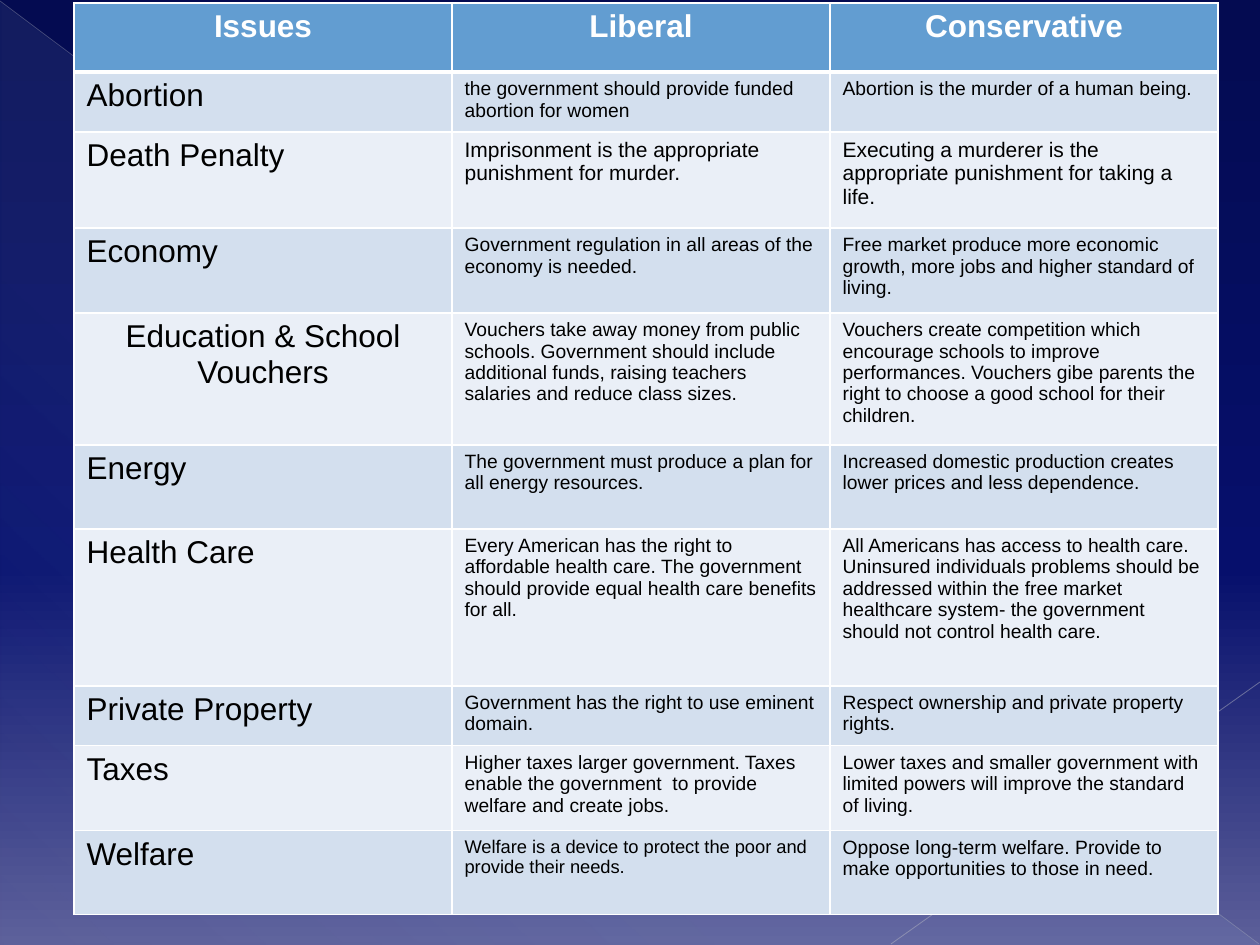
"""Build a slide with a table comparing liberal and conservative views on issues."""
from lxml import etree
from pptx import Presentation
from pptx import util as u
from pptx.dml.color import RGBColor
from pptx.enum import shapes, text
from pptx.oxml.ns import qn

COLORS = {
    "navy": "040B51", "blue": "060F6C", "violet": "5C5F99", "haze": "ACCBF9",
    "long line": "B2B3BE", "short line": "BBBCC5",
    "header": "629DD1", "odd": "D3DFEE", "even": "EAEFF7",
    "white": "FFFFFF", "black": "000000",
}
HEADERS = ["Issues", "Liberal", "Conservative"]
COLUMN_WIDTHS = [378, 378, 388]
ROW_HEIGHTS = [69, 60, 96, 85, 132, 84, 157, 60, 85, 84]
ISSUES = [
    ("Abortion", "the government should provide funded abortion for women",
     "Abortion is the murder of a human being."),
    ("Death Penalty", "Imprisonment is the appropriate punishment for murder.",
     "Executing a murderer is the appropriate punishment for taking a life."),
    ("Economy", "Government regulation in all areas of the economy is needed.",
     "Free market produce more economic growth, more jobs and higher standard of living."),
    ("Education & School Vouchers",
     "Vouchers take away money from public schools. Government should include "
     "additional funds, raising teachers salaries and reduce class sizes.",
     "Vouchers create competition which encourage schools to improve performances. "
     "Vouchers gibe parents the right to choose a good school for their children."),
    ("Energy", "The government must produce a plan for all energy resources.",
     "Increased domestic production creates lower prices and less dependence."),
    ("Health Care",
     "Every American has the right to affordable health care. The government should "
     "provide equal health care benefits for all.",
     "All Americans has access to health care. Uninsured individuals problems should be "
     "addressed within the free market  healthcare system- the government should not "
     "control health care."),
    ("Private Property", "Government has the right to use eminent domain.",
     "Respect ownership and private property rights."),
    ("Taxes",
     "Higher taxes larger government. Taxes enable the government  to provide welfare "
     "and create jobs.",
     "Lower taxes and smaller government with limited powers will improve the standard of living."),
    ("Welfare", "Welfare is a device to protect the poor and provide their needs.",
     "Oppose long-term welfare. Provide to make opportunities to those in need."),
]
SPECIAL_SIZES = {(2, 1): 12, (2, 2): 12, (9, 1): 10.5}
CENTERED_ISSUE = (4, 0)


def px(length):
    return u.Emu(round(length * 914400 / 126))


def rgb(name):
    return RGBColor.from_string(COLORS[name])


def add_color(parent, name, opacity=100):
    color = etree.SubElement(parent, qn("a:srgbClr"), val=COLORS[name])
    if opacity < 100:
        etree.SubElement(color, qn("a:alpha"), val=str(opacity * 1000))


class SlideBuilder:
    def __init__(self, slide, font="Arial"):
        self.slide = slide
        self.font = font

    def gradient(self, fill, owner, angle, stops):
        fill.gradient()
        fill.gradient_angle = 360 - angle
        stop_list = next(owner.iter(qn("a:gsLst")))
        for old_stop in list(stop_list):
            stop_list.remove(old_stop)
        for position, name, opacity in stops:
            stop = etree.SubElement(stop_list, qn("a:gs"), pos=str(position * 1000))
            add_color(stop, name, opacity)

    def background(self, angle, stops):
        self.gradient(self.slide.background.fill, self.slide.element, angle, stops)

    def triangle(self, left, top, width, height, angle, stops):
        shape = self.slide.shapes.add_shape(
            shapes.MSO_SHAPE.RIGHT_TRIANGLE, px(left), px(top), px(width), px(height))
        shape.shadow.inherit = False
        shape.line.fill.background()
        self.gradient(shape.fill, shape.element, angle, stops)

    def line(self, start, end, name, width, opacity):
        connector = self.slide.shapes.add_connector(
            shapes.MSO_CONNECTOR.STRAIGHT, *map(px, start + end))
        connector.line.width = u.Pt(width)
        connector.line.color.rgb = rgb(name)
        color = next(connector.element.spPr.iter(qn("a:srgbClr")))
        etree.SubElement(color, qn("a:alpha"), val=str(opacity * 1000))
        etree.SubElement(connector.element.spPr, qn("a:effectLst"))

    def borders(self, cell, top, bottom):
        properties = cell._tc.get_or_add_tcPr()
        for side, width in (("L", 1), ("R", 1), ("T", top), ("B", bottom)):
            border = etree.SubElement(properties, qn("a:ln" + side), w=str(u.Pt(width)))
            add_color(etree.SubElement(border, qn("a:solidFill")), "white")

    def cell(self, cell, wording, size, fill, color="black", bold=False, centered=False):
        cell.fill.solid()
        cell.fill.fore_color.rgb = rgb(fill)
        cell.text = wording
        paragraph = cell.text_frame.paragraphs[0]
        paragraph.alignment = text.PP_ALIGN.CENTER if centered else text.PP_ALIGN.LEFT
        paragraph.font.name = self.font
        paragraph.font.size = u.Pt(size)
        paragraph.font.bold = bold
        paragraph.font.color.rgb = rgb(color)

    def table(self, left, top, rows):
        table = self.slide.shapes.add_table(
            len(rows), len(COLUMN_WIDTHS), px(left), px(top),
            px(sum(COLUMN_WIDTHS)), px(sum(ROW_HEIGHTS))).table
        for column, width in zip(table.columns, COLUMN_WIDTHS):
            column.width = px(width)
        for row, height in zip(table.rows, ROW_HEIGHTS):
            row.height = px(height)
        for i, row in enumerate(rows):
            for j, wording in enumerate(row):
                cell = table.cell(i, j)
                self.borders(cell, 3 if i == 1 else 1, 3 if i == 0 else 1)
                if i == 0:
                    self.cell(cell, wording, 18, "header", "white", True, True)
                else:
                    size = SPECIAL_SIZES.get((i, j), 18 if j == 0 else 11)
                    self.cell(cell, wording, size, "odd" if i % 2 else "even",
                              centered=(i, j) == CENTERED_ISSUE)


def main():
    presentation = Presentation()
    presentation.slide_width, presentation.slide_height = px(1260), px(945)
    builder = SlideBuilder(presentation.slides.add_slide(presentation.slide_layouts[6]))
    builder.background(90, [(0, "navy", 100), (60, "blue", 100), (100, "violet", 100)])
    builder.triangle(1, 2, 1259, 943, 133,
                     [(0, "haze", 10), (70, "haze", 8), (100, "haze", 1)])
    builder.line((0, 1), (1259, 944), "long line", 0.39, 35)
    builder.line((1260, 682), (891, 944), "short line", 0.47, 45)
    builder.table(74, 3, [HEADERS, *ISSUES])
    presentation.save("out.pptx")


if __name__ == "__main__":
    main()
